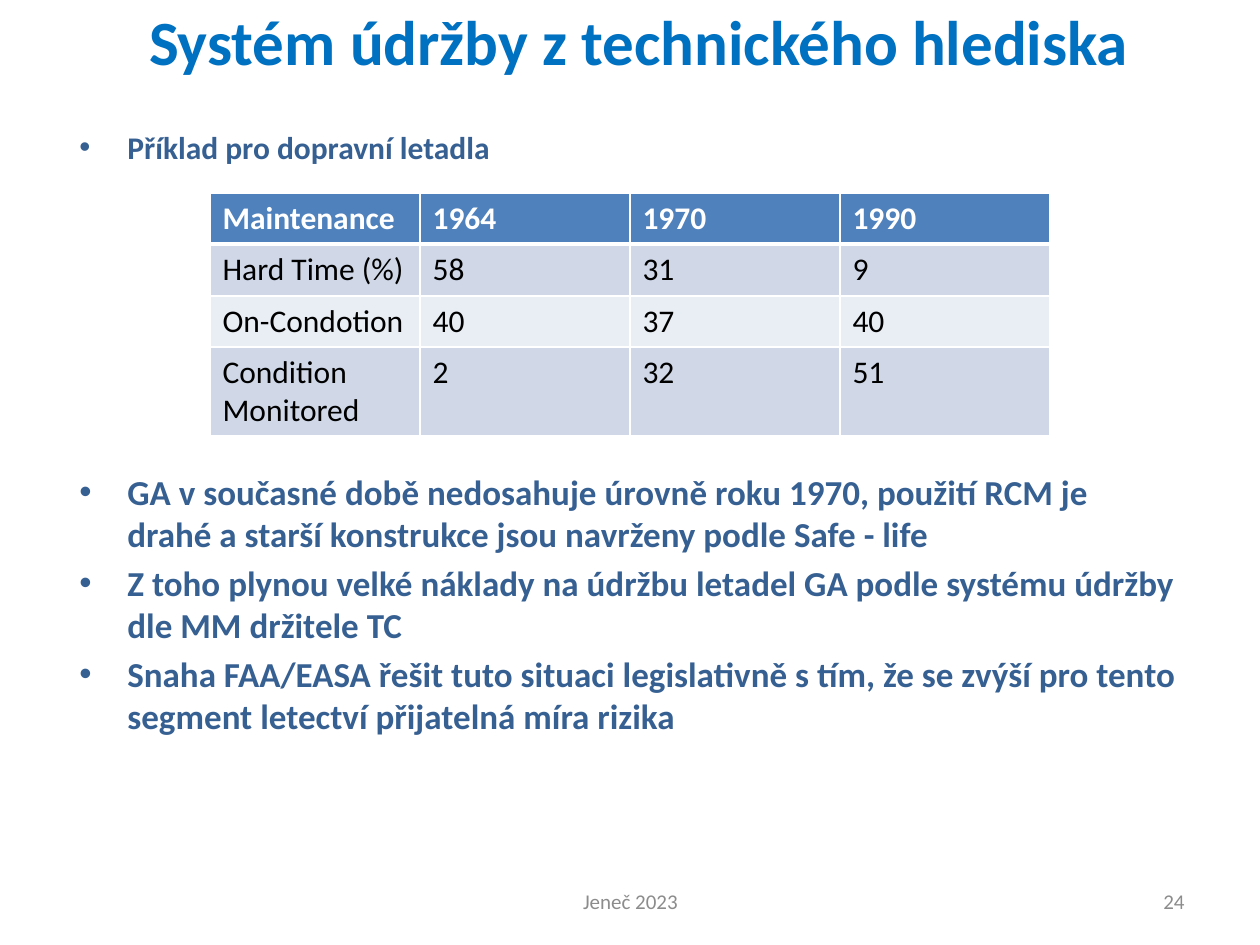
from lxml import etree
from pptx import Presentation
from pptx.dml.color import RGBColor
from pptx.enum.text import MSO_ANCHOR, PP_ALIGN
from pptx.oxml.ns import qn
from pptx.util import Emu, Pt

PX = 914400 / 126
FONT = "Calibri"
WHITE = RGBColor(0xFF, 0xFF, 0xFF)
BLACK = RGBColor(0, 0, 0)
BLUE = RGBColor(0x00, 0x70, 0xC0)
NAVY = RGBColor(0x37, 0x60, 0x92)
GREY = RGBColor(0x8C, 0x8C, 0x8C)
HEAD = RGBColor(0x4F, 0x81, 0xBD)
BANDS = RGBColor(0xE9, 0xED, 0xF4), RGBColor(0xD0, 0xD8, 0xE8)

LEFT, CENTER, RIGHT = PP_ALIGN.LEFT, PP_ALIGN.CENTER, PP_ALIGN.RIGHT
TOP, MIDDLE = MSO_ANCHOR.TOP, MSO_ANCHOR.MIDDLE

TITLE = "Systém údržby z technického hlediska"
# text, size in points, space before in points
BULLETS = [
    ("Příklad pro dopravní letadla", 18, 0),
    ("GA v současné době nedosahuje úrovně roku 1970, použití RCM je "
     "drahé a starší konstrukce jsou navrženy podle Safe - life", 20, 174),
    ("Z toho plynou velké náklady na údržbu letadel GA podle systému údržby "
     "dle MM držitele TC", 20, 4),
    ("Snaha FAA/EASA řešit tuto situaci legislativně s tím, že se zvýší pro "
     "tento segment letectví přijatelná míra rizika", 20, 4),
]
ROWS = [
    ("Maintenance", "1964", "1970", "1990"),
    ("Hard Time (%)", "58", "31", "9"),
    ("On-Condotion", "40", "37", "40"),
    ("Condition Monitored", "2", "32", "51"),
]
COL_WIDTH = 210
ROW_HEIGHTS = [51, 52, 51, 88]


def px(n):
    return Emu(round(n * PX))


def style(para, size, color, bold=False, align=LEFT):
    para.alignment = align
    font = para.font
    font.name, font.size, font.bold = FONT, Pt(size), bold
    font.color.rgb = color


def add_frame(slide, x, y, w, h, anchor=MIDDLE):
    frame = slide.shapes.add_textbox(px(x), px(y), px(w), px(h)).text_frame
    frame.word_wrap = True
    frame.vertical_anchor = anchor
    return frame


def add_line(slide, box, text, size, color, bold=False, align=CENTER):
    """Add a text box that holds one line."""
    frame = add_frame(slide, *box)
    frame.text = text
    style(frame.paragraphs[0], size, color, bold, align)
    return frame


def add_bullets(slide):
    frame = add_frame(slide, 67, 122, 1123, 743, TOP)
    for i, (text, size, gap) in enumerate(BULLETS):
        para = frame.add_paragraph() if i else frame.paragraphs[0]
        para.text = text
        para.space_before = Pt(gap)
        style(para, size, NAVY, True)
        props = para._p.get_or_add_pPr()
        props.set("marL", str(px(48)))
        props.set("indent", str(px(-48)))
        mark = etree.Element(qn("a:buFont"), typeface="Arial")
        char = etree.Element(qn("a:buChar"), char="•")
        spot = props.index(props.find(qn("a:defRPr")))
        props[spot:spot] = [mark, char]


def set_edges(cell, widths):
    """Give a cell white borders; widths maps each side to points."""
    props = cell._tc.get_or_add_tcPr()
    for i, (side, width) in enumerate(widths.items()):
        line = etree.Element(qn("a:ln" + side), w=str(Pt(width)))
        fill = etree.SubElement(line, qn("a:solidFill"))
        etree.SubElement(fill, qn("a:srgbClr"), val=str(WHITE))
        props.insert(i, line)


def add_grid(slide):
    count = len(ROWS[0])
    table = slide.shapes.add_table(
        len(ROWS), count, px(210), px(193),
        px(COL_WIDTH * count), px(sum(ROW_HEIGHTS))).table
    for col in table.columns:
        col.width = px(COL_WIDTH)
    for r, (row, height) in enumerate(zip(ROWS, ROW_HEIGHTS)):
        table.rows[r].height = px(height)
        head = r == 0
        for c, text in enumerate(row):
            cell = table.cell(r, c)
            cell.text = text
            style(cell.text_frame.paragraphs[0], 18,
                  WHITE if head else BLACK, head)
            cell.fill.solid()
            cell.fill.fore_color.rgb = HEAD if head else BANDS[r % 2]
            set_edges(cell, {"L": 1, "R": 1, "T": 3 if r == 1 else 1,
                             "B": 3 if head else 1})


def main():
    deck = Presentation()
    deck.slide_width, deck.slide_height = px(1260), px(945)
    slide = deck.slides.add_slide(deck.slide_layouts[6])
    title = add_line(slide, (72, 2, 1134, 77), TITLE, 36, BLUE, True)
    title.margin_top = title.margin_bottom = 0
    add_line(slide, (431, 876, 399, 50), "Jeneč 2023", 12, GREY)
    add_line(slide, (903, 876, 294, 50), "24", 12, GREY, align=RIGHT)
    add_bullets(slide)
    add_grid(slide)
    deck.save("out.pptx")


if __name__ == "__main__":
    main()
